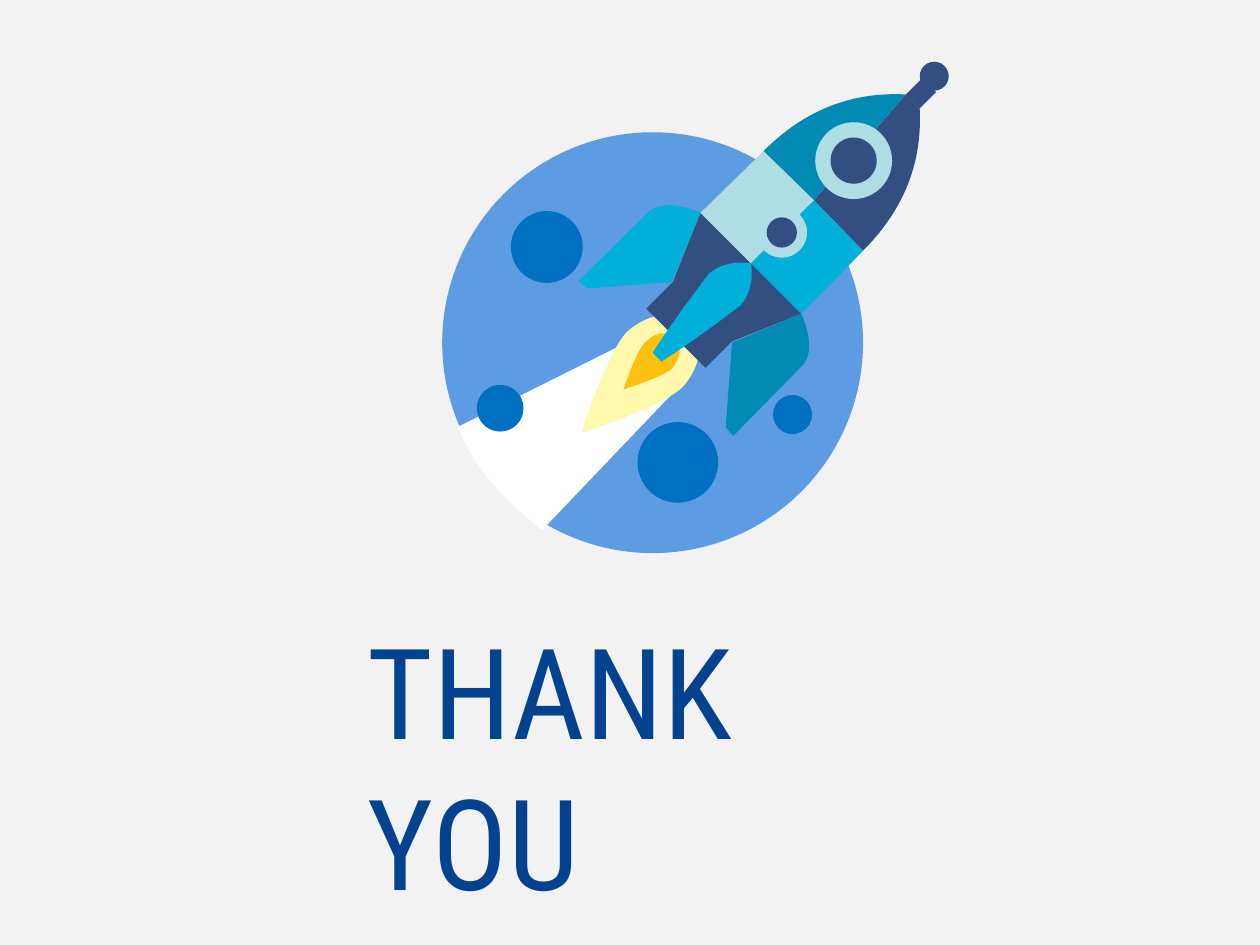
from lxml.etree import SubElement
from pptx import Presentation
from pptx.dml.color import RGBColor
from pptx.enum.shapes import MSO_SHAPE as Shape
from pptx.enum.text import MSO_ANCHOR as Anchor, MSO_AUTO_SIZE as AutoSize, PP_ALIGN as Align
from pptx.oxml.ns import qn
from pptx.util import Inches, Pt

COLORS = {
    "paper": "F2F2F2", "title": "03428F", "planet": "5D9CE3", "crater": "0070C0",
    "white": "FFFFFF", "navy": "334F82", "teal": "008AB4", "cyan": "00B0D8",
    "pale": "AEDEE4", "flame": "FFF8AD", "ember": "FFC10E",
}
COLUMNS, ROWS = 1000, 750
CELL = Inches(0.01)
AXIS = 805

PLANET = (518, 272, 167)
CRATERS = [(434, 196, 28.5), (629, 329, 15.5), (538, 367, 32), (397, 324, 18.5)]
PORTHOLES = [(677.5, 30.5), (620.5, 20)]
BEAM = [(493, 274), (534, 312), (430, 421), (405, 399, 384, 384, 363, 339)]
TIP = (719, 75)
NOSE = [TIP, (679, 73, 641, 85, 606, 120), (646, 159)]
BODY = [(556, 169), (606, 120), (646, 159), (596, 209)]
SKIRT = [(556, 169), (534, 224), (513, 245)]
FLAME = [(462, 342), (462, 342, 481, 282, 497, 264), (513, 249, 535, 245, 547, 257)]
SIDE_FIN = [(556, 169), (556, 169, 527, 155, 514, 169), (459, 223), (466, 229), (533, 224)]
MIDDLE_FIN = [(518, 280), (528, 264, 554, 228, 563, 217), (577, 205, 596, 209, 596, 209)]


def mirror(steps):
    """Reflect steps across the rocket's diagonal axis."""
    return [tuple(AXIS - value for value in reversed(step))[::1] if len(step) == 2
            else tuple(AXIS - step[index ^ 1] for index in range(len(step)))
            for step in steps]


def symmetric(half):
    """Join a half outline to its reflection, walked backwards."""
    values = [value for step in mirror(half) for value in step]
    points = list(zip(values[::2], values[1::2]))[::-1]
    back, position = [points[0]], 1
    for step in half[:0:-1]:
        count = len(step) // 2
        back.append(sum(points[position:position + count], ()))
        position += count
    return half + back


def shrink(steps, ratio, left, top):
    """Scale steps about their first point and move that point."""
    origin = steps[0]
    return [tuple(round((left, top)[index % 2] + ratio * (value - origin[index % 2]))
                  for index, value in enumerate(step)) for step in steps]


class Painter:
    """Draws styled elements on the current slide in grid cells."""

    font = "Roboto Condensed"

    def __init__(self, deck):
        self.page = deck.slides.add_slide(deck.slide_layouts[5])
        background = self.page.background.fill
        background.solid()
        background.fore_color.rgb = RGBColor.from_string(COLORS["paper"])
        self.group = self.page.shapes.add_group_shape()

    def paint(self, shape, color):
        shape.shadow.inherit = False
        shape.fill.solid()
        shape.fill.fore_color.rgb = RGBColor.from_string(COLORS[color])
        shape.line.fill.background()

    def disc(self, x, y, radius, color):
        bounds = [int(CELL * value) for value in (x - radius, y - radius, 2 * radius, 2 * radius)]
        self.paint(self.group.shapes.add_shape(Shape.OVAL, *bounds), color)

    def outline(self, steps, color):
        start, *rest = steps
        builder = self.group.shapes.build_freeform(*start, scale=CELL)
        for step in rest:
            builder.add_line_segments(list(zip(step[::2], step[1::2])), close=False)
        builder.add_line_segments([], close=True)
        shape = builder.convert_to_shape()
        self.bend(shape, rest)
        self.paint(shape, color)

    def bend(self, shape, steps):
        lines = iter(list(shape._element.iter(qn("a:lnTo"))))
        for step in steps:
            parts = [next(lines) for _ in step[::2]]
            if len(parts) == 3:
                curve = SubElement(parts[0].getparent(), qn("a:cubicBezTo"))
                parts[0].addprevious(curve)
                for part in parts:
                    curve.append(part[0])
                    part.getparent().remove(part)

    def title(self, text, left, top, width, height, size):
        box = self.page.shapes.title
        box.left, box.top, box.width, box.height = (
            CELL * value for value in (left, top, width, height))
        frame = box.text_frame
        frame.text = text
        frame.word_wrap = True
        frame.auto_size = AutoSize.SHAPE_TO_FIT_TEXT
        frame.vertical_anchor = Anchor.TOP
        para = frame.paragraphs[0]
        para.alignment = Align.LEFT
        span = para.runs[0]
        span.font.name = self.font
        span.font.size = Pt(size)
        span.font.color.rgb = RGBColor.from_string(COLORS["title"])


def main():
    deck = Presentation()
    deck.slide_width, deck.slide_height = CELL * COLUMNS, CELL * ROWS
    painter = Painter(deck)
    painter.disc(*PLANET, "planet")
    antenna = symmetric([TIP, (732, 62)])
    flame = symmetric(FLAME)
    for steps, color in [
        (BEAM, "white"), (antenna, "navy"), (mirror(NOSE) + [TIP], "navy"), (NOSE, "teal"),
        (flame, "flame"), (shrink(flame, 0.48, 495, 309), "ember"),
        (symmetric(SKIRT), "navy"), (BODY, "pale"), (mirror(BODY), "cyan"),
        (SIDE_FIN, "cyan"), (mirror(SIDE_FIN), "teal"), (symmetric(MIDDLE_FIN), "cyan"),
    ]:
        painter.outline(steps, color)
    painter.disc(741.5, 60.5, 11.5, "navy")
    for x, radius in PORTHOLES:
        painter.disc(x, AXIS - x, radius, "pale")
        painter.disc(x, AXIS - x, radius * 0.6, "navy")
    for crater in CRATERS:
        painter.disc(*crater, "crater")
    painter.title("THANK YOU", 282, 482, 462, 131, 72)
    deck.save("out.pptx")


if __name__ == "__main__":
    main()
